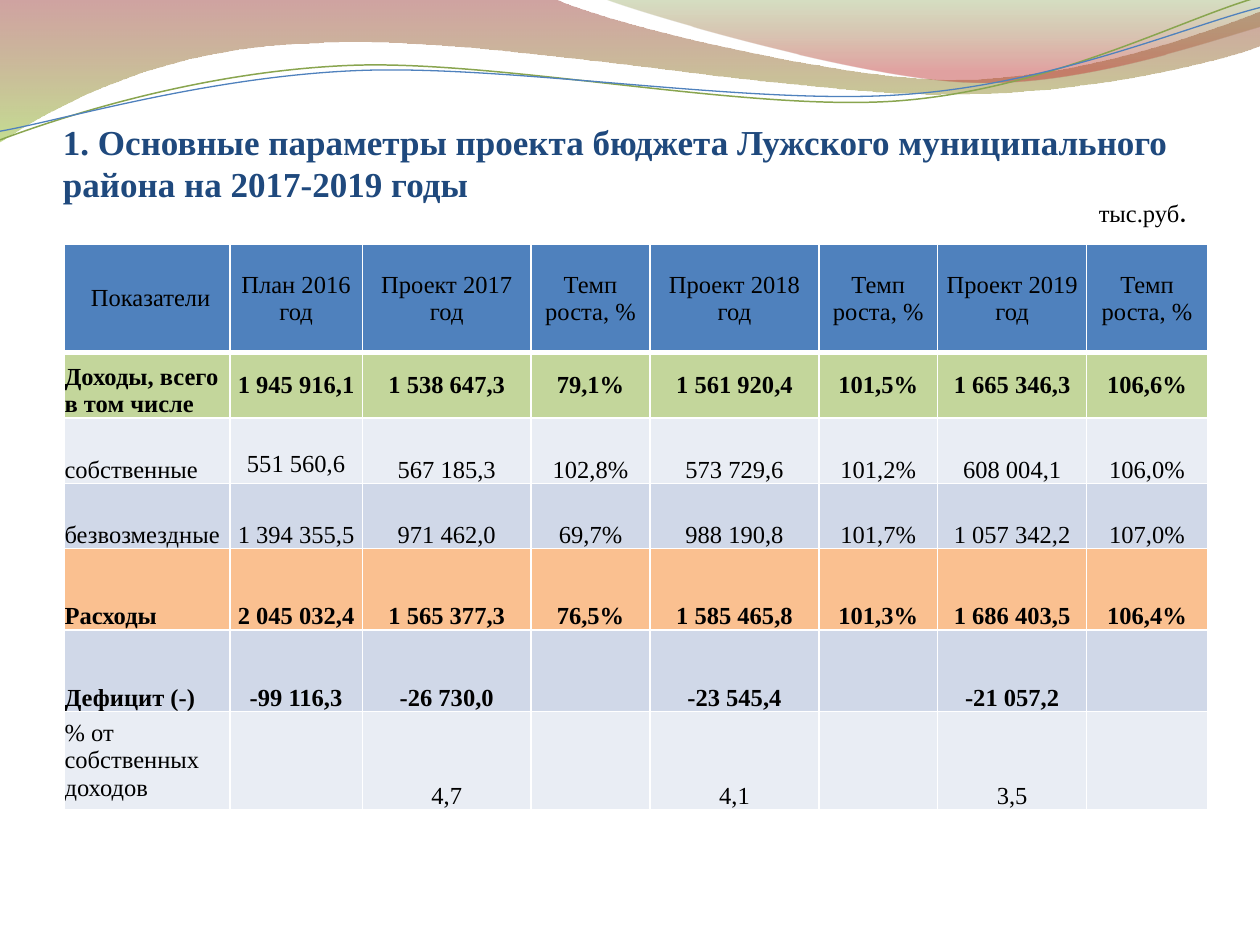
"""Build the slide with the main parameters of the district budget."""
from lxml import etree
from pptx import Presentation
from pptx.dml.color import RGBColor
from pptx.enum.text import MSO_ANCHOR, PP_ALIGN
from pptx.oxml.ns import qn
from pptx.util import Pt

TOP, MIDDLE, BOTTOM = MSO_ANCHOR.TOP, MSO_ANCHOR.MIDDLE, MSO_ANCHOR.BOTTOM
LEFT, CENTER = PP_ALIGN.LEFT, PP_ALIGN.CENTER

BLACK = RGBColor(0x00, 0x00, 0x00)
WHITE = RGBColor(0xFF, 0xFF, 0xFF)
NAVY = RGBColor(0x1F, 0x49, 0x7D)
BLUE = RGBColor(0x4F, 0x81, 0xBD)
GREEN = RGBColor(0xC3, 0xD6, 0x9B)
ORANGE = RGBColor(0xFA, 0xC0, 0x90)
PALE = RGBColor(0xE9, 0xED, 0xF4)
GREY = RGBColor(0xD0, 0xD8, 0xE8)
WAVE_GREEN = RGBColor(0x89, 0xA5, 0x4F)
MAROON = RGBColor(0x97, 0x33, 0x30)
LIME = RGBColor(0x95, 0xC2, 0x38)
OLIVE = RGBColor(0x76, 0x95, 0x37)
RED = RGBColor(0xBE, 0x33, 0x30)

BAND = [(0, 0), (316.8, -0.7), (342.7, 12.2, 478.1, 45.4, 545.8, 45.4),
        (614.2, 45.4, 689.8, 18.7, 720, 6.5), (720.7, 25.9),
        (707.8, 31.7, 626.4, 54.7, 537.1, 54), (447.8, 54, 275, 20.2, 185, 24.5),
        (92.9, 25.9, 33.1, 59.8, -0.7, 81.4), (0, 0)]
CORNER = [(344.9, -0.7), (366.5, 7.9, 491, 44.6, 553.7, 46.8),
          (616.3, 49.7, 691.9, 23, 720, 15.1), (720, 0), (344.9, -0.7)]
GREEN_WAVE = [(-1.4, 63), (33.8, 51.7, 114.1, 29.4, 199.8, 29.9),
              (284.8, 30.3, 425.8, 67.3, 512.4, 64.9), (599, 62.4, 676.5, 25.7, 720.2, 15.5)]
BLUE_WAVE = [(-1.1, 58), (32.9, 53.8, 118.3, 32.5, 204.1, 33),
             (290.6, 33.4, 428.9, 63.8, 515.5, 61.4), (601.3, 59.6, 678.5, 30.1, 721.4, 21.3)]
WAVE_TILT = -2.7

COLUMN_WIDTHS = [94.4, 75.8, 96.4, 68, 96.5, 67.9, 85.1, 69.1]
GROWTH = "Темп роста, %"
ROWS = [
    (61.7, BLUE, False, MIDDLE, ["Показатели", "План 2016 год", "Проект 2017 год", GROWTH,
                                 "Проект 2018 год", GROWTH, "Проект 2019 год", GROWTH]),
    (37.4, GREEN, True, MIDDLE, ["Доходы, всего в том числе", "1 945 916,1", "1 538 647,3", "79,1%",
                                 "1 561 920,4", "101,5%", "1 665 346,3", "106,6%"]),
    (37.4, PALE, False, BOTTOM, ["собственные", "551 560,6", "567 185,3", "102,8%",
                                 "573 729,6", "101,2%", "608 004,1", "106,0%"]),
    (37.4, GREY, False, BOTTOM, ["безвозмездные", "1 394 355,5", "971 462,0", "69,7%",
                                 "988 190,8", "101,7%", "1 057 342,2", "107,0%"]),
    (46.6, ORANGE, True, BOTTOM, ["Расходы", "2 045 032,4", "1 565 377,3", "76,5%",
                                  "1 585 465,8", "101,3%", "1 686 403,5", "106,4%"]),
    (46.6, GREY, True, BOTTOM, ["Дефицит (-)", "-99 116,3", "-26 730,0", "",
                                "-23 545,4", "", "-21 057,2", ""]),
    (56, PALE, False, BOTTOM, ["% от собственных доходов", "", "4,7", "", "4,1", "", "3,5", ""]),
]
ANCHORS = {(6, 0): MIDDLE, (1, 0): BOTTOM}
MARGINS = {(0, 0): (4, 0), (2, 1): (0, 3.4)}


def add_span(para, text, size=14, color=BLACK, bold=False, font="Times New Roman"):
    span = para.add_run()
    span.text = text
    span.font.size = Pt(size)
    span.font.name = font
    span.font.bold = bold
    span.font.color.rgb = color


class SlideWriter:
    def __init__(self, page, text_size=14):
        self.page = page
        self.text_size = text_size

    def outline(self, segments):
        points = [(Pt(x), Pt(y)) for part in segments for x, y in zip(part[::2], part[1::2])]
        builder = self.page.shapes.build_freeform(*points[0])
        builder.add_line_segments(points[1:], close=segments[0] == segments[-1])
        shape = builder.convert_to_shape()
        shape.shadow.inherit = False
        lines = iter(list(shape._element.spPr.iter(qn("a:lnTo"))))
        for part in segments[1:]:
            first = next(lines)
            if len(part) == 6:
                curve = etree.Element(qn("a:cubicBezTo"))
                first.addprevious(curve)
                for line in (first, next(lines), next(lines)):
                    curve.append(line[0])
                    line.getparent().remove(line)
        return shape

    def ribbon(self, segments, stops):
        shape = self.outline(segments)
        shape.line.fill.background()
        shape.fill.gradient()
        shape.fill.gradient_angle = 270
        for stop, (position, color, _) in zip(shape.fill.gradient_stops, stops):
            stop.position = position
            stop.color.rgb = color
        for tint, (_, _, opacity) in zip(shape._element.spPr.iter(qn("a:srgbClr")), stops):
            etree.SubElement(tint, qn("a:alpha"), val=str(opacity * 1000))

    def wave(self, segments, color, width):
        shape = self.outline(segments)
        shape.rotation = WAVE_TILT
        shape.fill.background()
        shape.line.color.rgb = color
        shape.line.width = Pt(width)

    def text(self, place, spans, wrap=True, anchor=TOP, margins=(7.2, 3.6, 7.2, 3.6)):
        box = self.page.shapes.add_textbox(*map(Pt, place))
        frame = box.text_frame
        frame.word_wrap = wrap
        frame.vertical_anchor = anchor
        (frame.margin_left, frame.margin_top,
         frame.margin_right, frame.margin_bottom) = map(Pt, margins)
        for text, style in spans:
            add_span(frame.paragraphs[0], text, **style)

    def borders(self, cell, widths):
        properties = cell._tc.get_or_add_tcPr()
        for index, (side, width) in enumerate(zip("LRTB", widths)):
            line = etree.Element(qn(f"a:ln{side}"), w=str(Pt(width)))
            fill = etree.SubElement(line, qn("a:solidFill"))
            etree.SubElement(fill, qn("a:srgbClr"), val=str(WHITE))
            properties.insert(index, line)

    def cell(self, cell, text, fill, bold, anchor, align, margins):
        cell.fill.solid()
        cell.fill.fore_color.rgb = fill
        cell.vertical_anchor = anchor
        cell.margin_right = cell.margin_top = 0
        cell.margin_left, cell.margin_bottom = map(Pt, margins)
        para = cell.text_frame.paragraphs[0]
        para.alignment = align
        if text:
            add_span(para, text, self.text_size, bold=bold)

    def table(self, left, top, widths, rows):
        heights = [row[0] for row in rows]
        frame = self.page.shapes.add_table(len(rows), len(widths), Pt(left), Pt(top),
                                           Pt(sum(widths)), Pt(sum(heights)))
        table = frame.table
        table.first_row = table.horz_banding = False
        for column, width in zip(table.columns, widths):
            column.width = Pt(width)
        for r, (height, fill, bold, anchor, texts) in enumerate(rows):
            table.rows[r].height = Pt(height)
            for c, text in enumerate(texts):
                cell = table.cell(r, c)
                align = LEFT if r and c == 0 else CENTER
                self.cell(cell, text, fill, bold, ANCHORS.get((r, c), anchor), align,
                          MARGINS.get((r, c), (0, 0)))
                self.borders(cell, (1, 1, 3 if r == 1 else 1, 3 if r == 0 else 1))


def main():
    deck = Presentation()
    deck.slide_width, deck.slide_height = Pt(720), Pt(540)
    writer = SlideWriter(deck.slides.add_slide(deck.slide_layouts[6]))
    writer.ribbon(BAND, [(0, MAROON, 45), (1, LIME, 55)])
    writer.ribbon(CORNER, [(0, OLIVE, 30), (0.8, RED, 45)])
    writer.wave(GREEN_WAVE, WAVE_GREEN, 0.85)
    writer.wave(BLUE_WAVE, BLUE, 0.75)
    title = "1. Основные параметры проекта бюджета Лужского муниципального района на 2017-2019 годы"
    writer.text((36, 55.4, 648, 61.2), [(title, {"size": 20, "color": NAVY, "bold": True})],
                anchor=BOTTOM, margins=(0, 3.6, 0, 0))
    writer.table(36.9, 139.7, COLUMN_WIDTHS, ROWS)
    writer.text((620.8, 105.8, 65.5, 28.8),
                [("тыс.руб", {}), (".", {"size": 18, "font": "TeX Gyre Pagella"})], wrap=False)
    deck.save("out.pptx")


if __name__ == "__main__":
    main()
